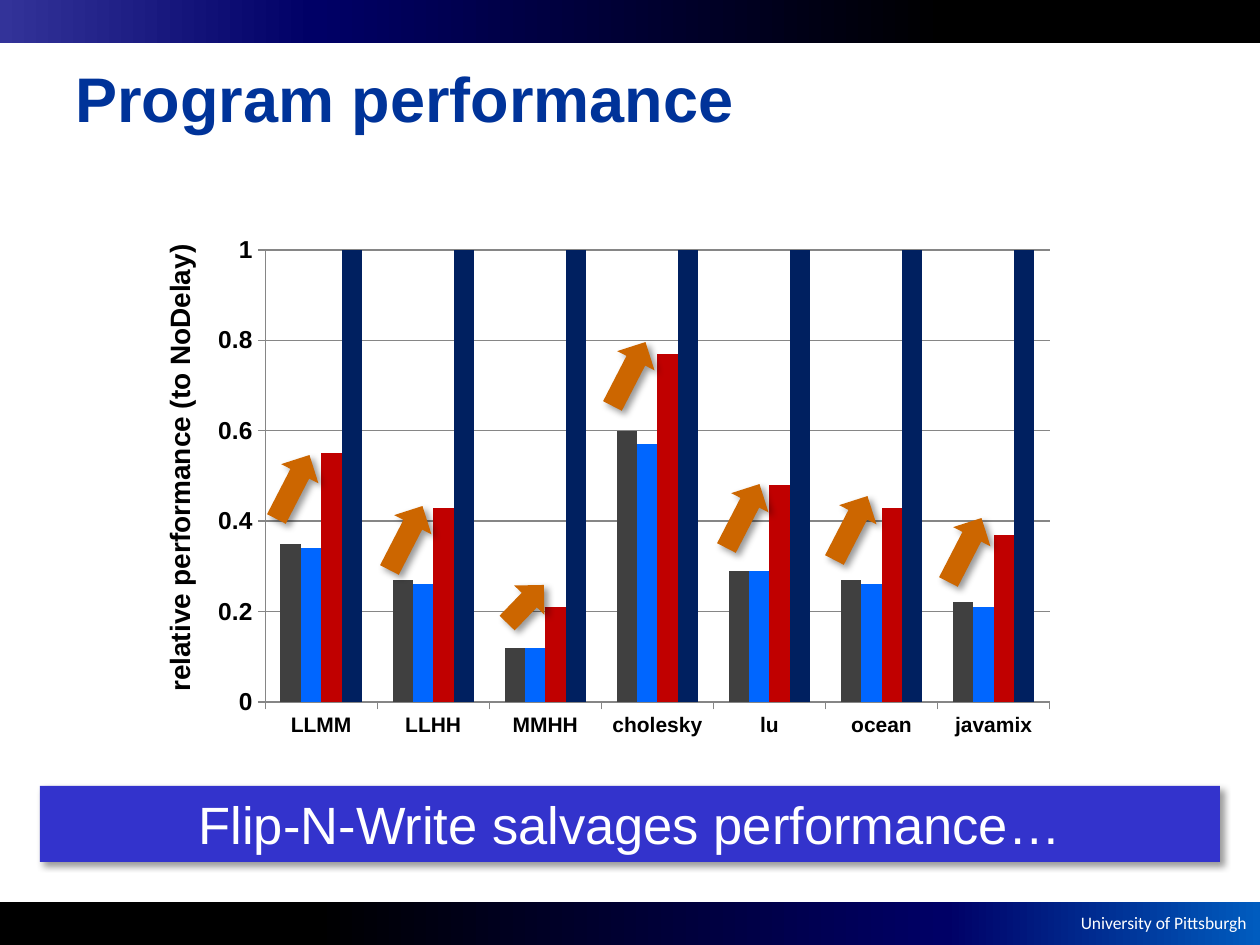
"""Build the program performance slide."""
from dataclasses import dataclass

import lxml.etree
import pptx
import pptx.chart.data
import pptx.dml.color
import pptx.enum.chart
import pptx.enum.dml
import pptx.enum.shapes
import pptx.enum.text
import pptx.oxml
import pptx.oxml.ns
import pptx.util

PX = 914400 / 126
SHAPES = pptx.enum.shapes.MSO_SHAPE
ALIGN = pptx.enum.text.PP_ALIGN
ANCHOR = pptx.enum.text.MSO_ANCHOR
TICK = pptx.enum.chart.XL_TICK_MARK


@dataclass(frozen=True)
class Theme:
    """Colours, fonts and type sizes of the slide."""

    title: str = "003399"
    ink: str = "000000"
    light: str = "FFFFFF"
    banner: str = "3333CC"
    arrow: str = "CC6600"
    rule: str = "868686"
    series: tuple = ("404040", "0066FF", "C00000", "002060")
    header: tuple = ((0, "333399"), (25, "000066"), (75, "000000"), (100, "000000"))
    footer: tuple = ((0, "000000"), (25, "000000"), (75, "000066"), (100, "005CBF"))
    sans: str = "Arial"
    footer_font: str = "Calibri"
    title_size: int = 36
    banner_size: int = 30
    label_size: int = 16
    value_size: int = 14
    category_size: int = 12
    footer_size: int = 10


THEME = Theme()

CATEGORIES = ("LLMM", "LLHH", "MMHH", "cholesky", "lu", "ocean", "javamix")
VALUES = (
    (0.35, 0.27, 0.12, 0.6, 0.29, 0.27, 0.22),
    (0.34, 0.26, 0.12, 0.57, 0.29, 0.26, 0.21),
    (0.55, 0.43, 0.21, 0.77, 0.48, 0.43, 0.37),
    (1,) * len(CATEGORIES),
)
STEEP_ARROWS = ((257, 466), (593, 353), (370, 517), (707, 495), (815, 507), (929, 529))


def px(*lengths):
    """Turn pixel lengths into EMU."""
    return [pptx.util.Emu(round(length * PX)) for length in lengths]


def rgb(colour):
    """Return the colour object for a hex string."""
    return pptx.dml.color.RGBColor.from_string(colour)


def apply(target, formats):
    """Set every attribute named in a dict of format values."""
    for name, value in formats.items():
        setattr(target, name, value)


def style_font(font, size, colour, name=THEME.sans, bold=False):
    """Give a font its face, size, weight and colour."""
    apply(font, {"name": name, "size": pptx.util.Pt(size), "bold": bold})
    font.color.rgb = rgb(colour)


def write(shape, text, font, align=ALIGN.LEFT, anchor=ANCHOR.TOP, wrap=True):
    """Put one styled paragraph into a shape."""
    frame = shape.text_frame
    apply(frame, {"word_wrap": wrap, "vertical_anchor": anchor})
    para = frame.paragraphs[0]
    para.alignment = align
    span = para.add_run()
    span.text = text
    style_font(span.font, **font)


def add_label(page, box, text, font, rotation=0, **layout):
    """Add a text box."""
    label = page.shapes.add_textbox(*px(*box))
    label.rotation = rotation
    write(label, text, font, **layout)


def add_plain(page, kind, box):
    """Add a preset shape with no line and no inherited shadow."""
    shape = page.shapes.add_shape(kind, *px(*box))
    shape.shadow.inherit = False
    shape.line.fill.background()
    return shape


def add_gradient_bar(page, box, stops):
    """Add a rectangle with a left-to-right gradient."""
    bar = add_plain(page, SHAPES.RECTANGLE, box)
    bar.fill.gradient()
    bar.fill.gradient_angle = 0
    stop_list = next(bar.element.iter(pptx.oxml.ns.qn("a:gsLst")))
    for stop in list(stop_list):
        stop_list.remove(stop)
    for position, colour in stops:
        stop = lxml.etree.SubElement(
            stop_list, pptx.oxml.ns.qn("a:gs"), pos=str(position * 1000)
        )
        lxml.etree.SubElement(stop, pptx.oxml.ns.qn("a:srgbClr"), val=colour)


def add_raised(page, kind, box, colour, rotation=0):
    """Add a solid shape with a soft drop shadow."""
    shape = add_plain(page, kind, box)
    shape.fill.solid()
    shape.fill.fore_color.rgb = rgb(colour)
    shape.rotation = rotation
    effects = next(shape.element.iter(pptx.oxml.ns.qn("a:effectLst")))
    effects.append(pptx.oxml.parse_xml(
        f'<a:outerShdw {pptx.oxml.ns.nsdecls("a")} blurRad="50800" dist="38100"'
        ' dir="2700000" algn="tl" rotWithShape="0">'
        f'<a:srgbClr val="{THEME.ink}"><a:alpha val="40000"/></a:srgbClr></a:outerShdw>'
    ))
    return shape


def style_axis(axis, size, formats):
    """Give an axis its type, line and format values."""
    style_font(axis.tick_labels.font, size, THEME.ink, bold=True)
    apply(axis, {"major_tick_mark": TICK.OUTSIDE, "minor_tick_mark": TICK.NONE, **formats})
    lines = [axis.format.line]
    if axis.has_major_gridlines:
        lines.append(axis.major_gridlines.format.line)
    for line in lines:
        line.color.rgb = rgb(THEME.rule)
        line.width = pptx.util.Pt(0.75)


def place_plot(chart, **fractions):
    """Fix the inner plot area as fractions of the chart."""
    plot_area = chart.plots[0]._element.getparent()
    for old in plot_area.findall(pptx.oxml.ns.qn("c:layout")):
        plot_area.remove(old)
    values = "".join(f'<c:{key} val="{value}"/>' for key, value in fractions.items())
    plot_area.insert(0, pptx.oxml.parse_xml(
        f'<c:layout {pptx.oxml.ns.nsdecls("c")}><c:manualLayout>'
        '<c:layoutTarget val="inner"/><c:xMode val="edge"/><c:yMode val="edge"/>'
        f'{values}</c:manualLayout></c:layout>'
    ))


def add_performance_chart(page, box):
    """Add the clustered columns of relative performance."""
    data = pptx.chart.data.CategoryChartData()
    data.categories = CATEGORIES
    for number, values in enumerate(VALUES, 1):
        data.add_series(f"Series {number}", values)
    kind = pptx.enum.chart.XL_CHART_TYPE.COLUMN_CLUSTERED
    chart = page.shapes.add_chart(kind, *px(*box), data).chart
    apply(chart, {"has_legend": False, "has_title": False})
    style_font(chart.font, THEME.value_size, THEME.ink, bold=True)
    plot = chart.plots[0]
    apply(plot, {"gap_width": 150, "overlap": 0, "vary_by_categories": False})
    for series, colour in zip(plot.series, THEME.series):
        series.format.fill.solid()
        series.format.fill.fore_color.rgb = rgb(colour)
    style_axis(chart.category_axis, THEME.category_size, {"has_major_gridlines": False})
    style_axis(chart.value_axis, THEME.value_size, {
        "minimum_scale": 0, "maximum_scale": 1, "major_unit": 0.2,
        "has_major_gridlines": True,
    })
    place_plot(chart, x=0.073, y=0.046, w=0.906, h=0.866)


def main():
    """Build and save the slide."""
    deck = pptx.Presentation()
    deck.slide_width, deck.slide_height = px(1260, 945)
    page = deck.slides.add_slide(deck.slide_layouts[6])
    add_gradient_bar(page, (0, 902, 1260, 43), THEME.footer)
    footer = {"size": THEME.footer_size, "colour": THEME.light, "name": THEME.footer_font}
    add_label(page, (1050, 906, 209, 34), "University of Pittsburgh", footer,
              align=ALIGN.RIGHT, wrap=False)
    add_gradient_bar(page, (0, 0, 1260, 43), THEME.header)
    title = {"size": THEME.title_size, "colour": THEME.title, "bold": True}
    add_label(page, (63, 18, 1134, 158), "Program performance", title, anchor=ANCHOR.MIDDLE)
    add_performance_chart(page, (202, 226, 866, 522))
    label = {"size": THEME.label_size, "colour": THEME.ink, "bold": True}
    add_label(page, (-60, 441, 479, 47), "relative performance (to NoDelay)", label,
              rotation=270, wrap=False)
    banner = add_raised(page, SHAPES.RECTANGLE, (40, 786, 1180, 76), THEME.banner)
    write(banner, "Flip-N-Write salvages performance…",
          {"size": THEME.banner_size, "colour": THEME.light}, align=ALIGN.CENTER)
    for left, top in STEEP_ARROWS:
        add_raised(page, SHAPES.RIGHT_ARROW, (left, top, 72, 42), THEME.arrow, 297.3)
    add_raised(page, SHAPES.RIGHT_ARROW, (499, 583, 53, 42), THEME.arrow, 314)
    deck.save("out.pptx")


if __name__ == "__main__":
    main()
